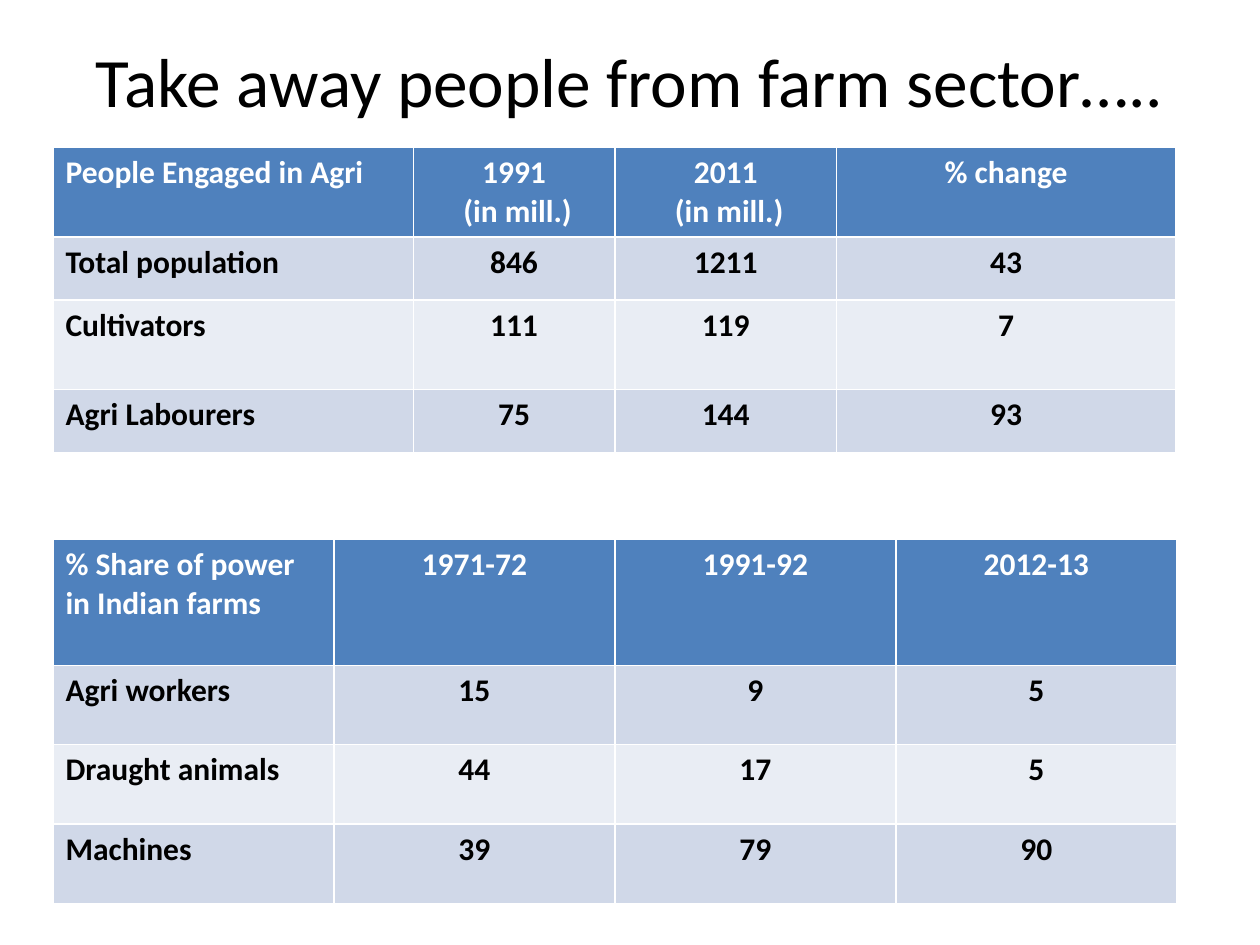
from dataclasses import dataclass

from pptx import Presentation
from pptx.dml.color import RGBColor as RGB
from pptx.enum.text import MSO_ANCHOR as Anchor, PP_ALIGN as Align
from pptx.util import Inches, Pt


@dataclass(frozen=True)
class Theme:
    font: str = "Calibri"
    title: float = 39.6
    body: float = 18
    dark: RGB = RGB(0, 0, 0)
    light: RGB = RGB(255, 255, 255)
    head: RGB = RGB(0x4F, 0x81, 0xBD)
    bands: tuple = (RGB(0xD0, 0xD8, 0xE8), RGB(0xE9, 0xED, 0xF4))


THEME = Theme()

PEOPLE = [
    ("People Engaged in Agri", "1991\n (in mill.)", "2011\n (in mill.)", "% change"),
    ("Total population", "846", "1211", "43"),
    ("Cultivators", "111", "119", "7"),
    ("Agri Labourers", "75", "144", "93"),
]
POWER = [
    ("% Share of power in Indian farms", "1971-72", "1991-92", "2012-13"),
    ("Agri workers", "15", "9", "5"),
    ("Draught animals", "44", "17", "5"),
    ("Machines", "39", "79", "90"),
]


def write(frame, text, *, size=THEME.body, color=THEME.dark, bold=False,
          align=Align.LEFT):
    frame.text = text
    frame.word_wrap = True
    for para in frame.paragraphs:
        para.alignment = align
        for run in para.runs:
            font = run.font
            font.name, font.size, font.bold = THEME.font, Pt(size), bold
            font.color.rgb = color


def add_title(slide, text, left, top, width, height):
    title = slide.shapes.title
    title.left, title.top = Inches(left), Inches(top)
    title.width, title.height = Inches(width), Inches(height)
    frame = title.text_frame
    write(frame, text, size=THEME.title, align=Align.CENTER)
    frame.vertical_anchor = Anchor.TOP
    frame.margin_top = 0


def add_grid(slide, data, left, top, widths, heights):
    """Add a banded table; its default style draws the white rules."""
    table = slide.shapes.add_table(
        len(data), len(widths), Inches(left), Inches(top),
        Inches(sum(widths)), Inches(sum(heights))).table
    for col, width in zip(table.columns, widths):
        col.width = Inches(width)
    for r, (row, height) in enumerate(zip(data, heights)):
        table.rows[r].height = Inches(height)
        fill = THEME.bands[(r - 1) % 2] if r else THEME.head
        for c, text in enumerate(row):
            cell = table.cell(r, c)
            cell.fill.solid()
            cell.fill.fore_color.rgb = fill
            write(cell.text_frame, text, bold=True,
                  color=THEME.dark if r else THEME.light,
                  align=Align.CENTER if c else Align.LEFT)


def main():
    deck = Presentation()
    deck.slide_width, deck.slide_height = Inches(10), Inches(7.5)
    slide = deck.slides.add_slide(deck.slide_layouts[5])
    add_title(slide, "Take away people from farm sector…..", 0.5, 0.3, 9, 1.25)
    add_grid(slide, PEOPLE, 0.42, 1.17, [2.86, 1.6, 1.76, 2.69],
             [0.7, 0.5, 0.71, 0.5])
    add_grid(slide, POWER, 0.42, 4.28, [2.23] * 4, [1] + [0.63] * 3)
    deck.save("out.pptx")


if __name__ == "__main__":
    main()
